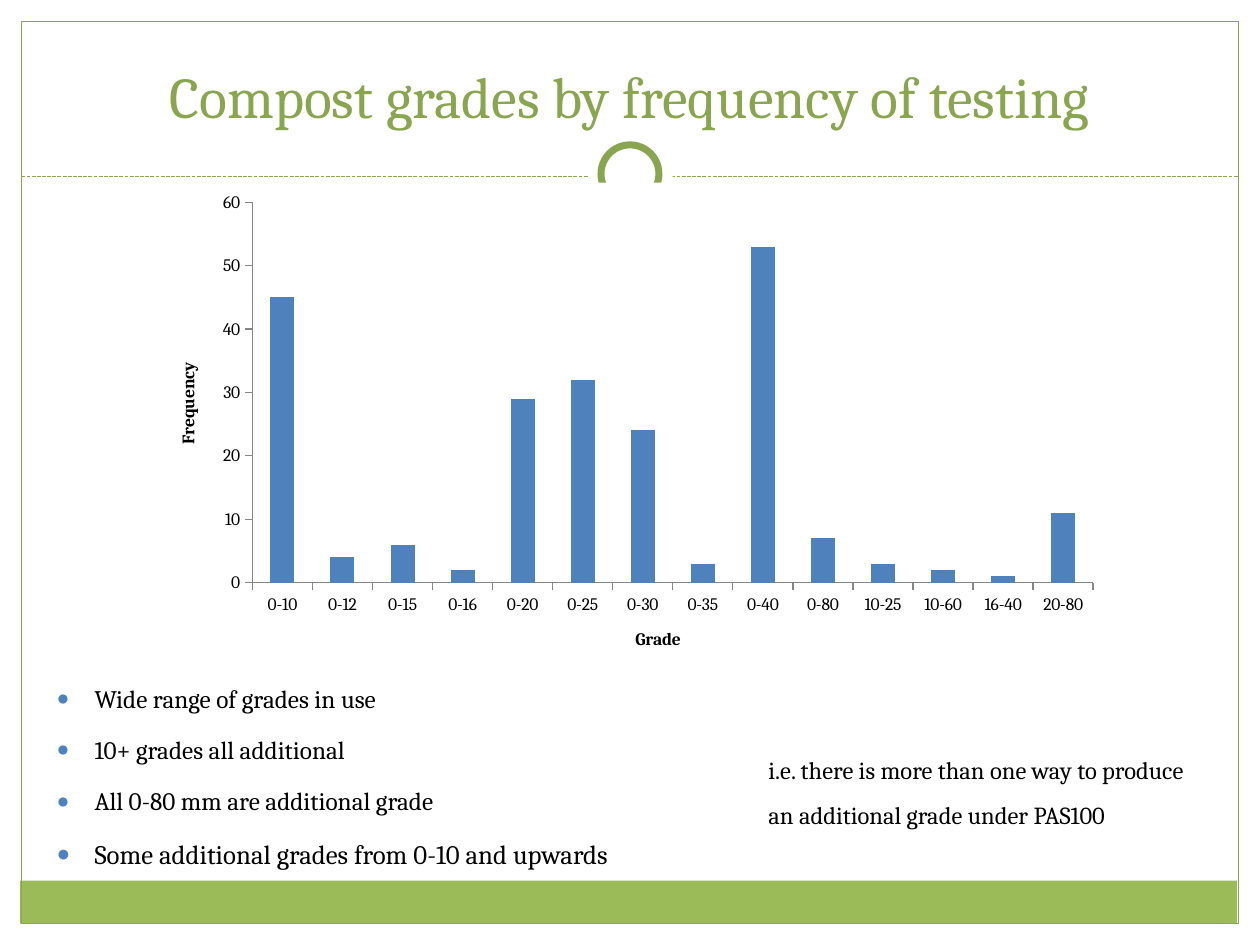
from dataclasses import dataclass
from typing import Optional

from lxml.etree import SubElement
from pptx import Presentation
from pptx.chart.data import CategoryChartData
from pptx.dml.color import RGBColor
from pptx.enum.chart import XL_CHART_TYPE, XL_TICK_MARK
from pptx.enum.dml import MSO_LINE
from pptx.enum.shapes import MSO_CONNECTOR, MSO_SHAPE
from pptx.enum.text import MSO_ANCHOR, MSO_AUTO_SIZE, PP_ALIGN
from pptx.oxml import parse_xml
from pptx.oxml.ns import nsdecls, qn
from pptx.util import Inches, Pt

FONT = "Cambria"
WHITE = RGBColor(0xFF, 0xFF, 0xFF)
BLACK = RGBColor(0, 0, 0)
GREEN = RGBColor(0x89, 0xA5, 0x4F)
LIGHT_GREEN = RGBColor(0x9B, 0xBB, 0x59)
BLUE = RGBColor(0x4F, 0x81, 0xBD)
GRAY = RGBColor(0x86, 0x86, 0x86)


@dataclass(frozen=True)
class Box:
    left: float
    top: float
    width: float
    height: float

    def lengths(self) -> tuple:
        return tuple(Inches(value) for value in (self.left, self.top, self.width, self.height))


@dataclass(frozen=True)
class Decoration:
    box: Box
    preset: MSO_SHAPE = MSO_SHAPE.RECTANGLE
    fill: Optional[RGBColor] = WHITE
    line_width: float = 0


@dataclass(frozen=True)
class Bullet:
    text: str
    size: float = 14.4


BACKGROUND = [
    Decoration(Box(0, 0, 10, 1.52)),
    Decoration(Box(0, 0, 0.17, 7.5)),
    Decoration(Box(9.83, 0, 0.17, 7.5)),
    Decoration(Box(0.16, 6.99, 9.66, 0.34), fill=LIGHT_GREEN),
    Decoration(Box(0.17, 0.17, 9.66, 7.16), fill=None, line_width=0.75),
]
MEDALLION = [
    Decoration(Box(4.67, 1.05, 0.67, 0.67), MSO_SHAPE.OVAL),
    Decoration(Box(4.77, 1.15, 0.46, 0.46), MSO_SHAPE.OVAL, line_width=4),
]
FREQUENCIES = {
    "0-10": 45, "0-12": 4, "0-15": 6, "0-16": 2, "0-20": 29, "0-25": 32, "0-30": 24,
    "0-35": 3, "0-40": 53, "0-80": 7, "10-25": 3, "10-60": 2, "16-40": 1, "20-80": 11,
}
BULLETS = [
    Bullet("Wide range of grades in use"),
    Bullet("10+ grades all additional"),
    Bullet("All 0-80 mm are additional grade"),
    Bullet("Some additional grades from 0-10 and upwards", 15.3),
]


def draw_decoration(slide, decoration: Decoration) -> None:
    shape = slide.shapes.add_shape(decoration.preset, *decoration.box.lengths())
    shape.shadow.inherit = False
    if decoration.fill is None:
        shape.fill.background()
    else:
        shape.fill.solid()
        shape.fill.fore_color.rgb = decoration.fill
    if decoration.line_width:
        shape.line.color.rgb = GREEN
        shape.line.width = Pt(decoration.line_width)
    else:
        shape.line.fill.background()


def draw_divider(slide) -> None:
    divider = slide.shapes.add_connector(
        MSO_CONNECTOR.STRAIGHT, Inches(0.17), Inches(1.4), Inches(9.83), Inches(1.4))
    divider.line.color.rgb = GREEN
    divider.line.width = Pt(0.75)
    divider.line.dash_style = MSO_LINE.SQUARE_DOT
    SubElement(divider._element.spPr, qn("a:effectLst"))


def add_run(paragraph, text: str, size: float, color: RGBColor = BLACK, bold: bool = False) -> None:
    run = paragraph.add_run()
    run.text = text
    run.font.name = FONT
    run.font.size = Pt(size)
    run.font.color.rgb = color
    run.font.bold = bold


def style_axis(axis, title: str) -> None:
    axis.has_major_gridlines = False
    axis.major_tick_mark = XL_TICK_MARK.OUTSIDE
    axis.minor_tick_mark = XL_TICK_MARK.NONE
    axis.format.line.color.rgb = GRAY
    axis.format.line.width = Pt(0.75)
    axis.has_title = True
    add_run(axis.axis_title.text_frame.paragraphs[0], title, 10, bold=True)


def white_fill() -> str:
    return (f'<c:spPr {nsdecls("c", "a")}><a:solidFill><a:srgbClr val="{WHITE}"/></a:solidFill>'
            '<a:ln><a:noFill/></a:ln></c:spPr>')


def draw_chart(slide) -> None:
    chart_data = CategoryChartData()
    chart_data.categories = list(FREQUENCIES)
    chart_data.add_series("Series 1", list(FREQUENCIES.values()))
    chart = slide.shapes.add_chart(
        XL_CHART_TYPE.COLUMN_CLUSTERED, *Box(1.16, 1.45, 7.67, 3.92).lengths(), chart_data).chart
    chart.has_title = False
    chart.has_legend = False
    chart.font.name = FONT
    chart.font.size = Pt(10)
    chart.font.color.rgb = BLACK
    style_axis(chart.category_axis, "Grade")
    style_axis(chart.value_axis, "Frequency")
    chart.value_axis.minimum_scale = 0
    chart.value_axis.maximum_scale = 60
    chart.value_axis.major_unit = 10
    plot = chart.plots[0]
    plot.gap_width = 150
    plot.vary_by_categories = False
    bars = plot.series[0].format.fill
    bars.solid()
    bars.fore_color.rgb = BLUE

    chart_space = chart._chartSpace
    chart_space.chart.addnext(parse_xml(white_fill()))
    plot_area = chart_space.chart.plotArea
    plot_area.append(parse_xml(white_fill()))
    for layout in plot_area.findall(qn("c:layout")):
        plot_area.remove(layout)
    positions = {"x": 0.11, "y": 0.04, "w": 0.87, "h": 0.77}
    modes = "".join(f'<c:{key}Mode val="edge"/>' for key in "xy")
    values = "".join(f'<c:{key} val="{value}"/>' for key, value in positions.items())
    plot_area.insert(0, parse_xml(
        f'<c:layout {nsdecls("c")}><c:manualLayout><c:layoutTarget val="inner"/>'
        f'{modes}{values}</c:manualLayout></c:layout>'))


def place_text(slide, shape, box: Box):
    shape.left, shape.top, shape.width, shape.height = box.lengths()
    slide.shapes._spTree.append(shape._element)
    text_frame = shape.text_frame
    text_frame.word_wrap = True
    text_frame.auto_size = MSO_AUTO_SIZE.NONE
    return text_frame


def write_title(slide) -> None:
    text_frame = place_text(slide, slide.shapes.title, Box(0.33, 0.25, 9.33, 0.83))
    text_frame.vertical_anchor = MSO_ANCHOR.BOTTOM
    paragraph = text_frame.paragraphs[0]
    paragraph.alignment = PP_ALIGN.CENTER
    add_run(paragraph, "Compost grades by frequency of testing", 33, GREEN)


def write_bullets(slide) -> None:
    text_frame = place_text(slide, slide.placeholders[1], Box(0.35, 5.25, 9.3, 1.7))
    for index, bullet in enumerate(BULLETS):
        paragraph = text_frame.add_paragraph() if index else text_frame.paragraphs[0]
        paragraph.line_spacing = 1.5
        paragraph.space_before = Pt(3.4)
        properties = paragraph._p.get_or_add_pPr()
        properties.set("marL", str(Inches(0.3)))
        properties.set("indent", str(Inches(-0.3)))
        SubElement(SubElement(properties, qn("a:buClr")), qn("a:srgbClr"), val=str(BLUE))
        SubElement(properties, qn("a:buSzPct"), val="85000")
        SubElement(properties, qn("a:buChar"), char="●")
        add_run(paragraph, bullet.text, bullet.size)


def write_remark(slide) -> None:
    box = Box(6, 5.83, 3.58, 1.12)
    text_frame = place_text(slide, slide.shapes.add_textbox(*box.lengths()), box)
    paragraph = text_frame.paragraphs[0]
    paragraph.line_spacing = 1.5
    add_run(paragraph, "i.e. there is more than one way to produce an additional grade under PAS100", 14)


def main() -> None:
    presentation = Presentation()
    presentation.slide_width, presentation.slide_height = Inches(10), Inches(7.5)
    slide = presentation.slides.add_slide(presentation.slide_layouts[1])
    for decoration in BACKGROUND:
        draw_decoration(slide, decoration)
    draw_divider(slide)
    for decoration in MEDALLION:
        draw_decoration(slide, decoration)
    draw_chart(slide)
    write_title(slide)
    write_bullets(slide)
    write_remark(slide)
    presentation.save("out.pptx")


if __name__ == "__main__":
    main()
